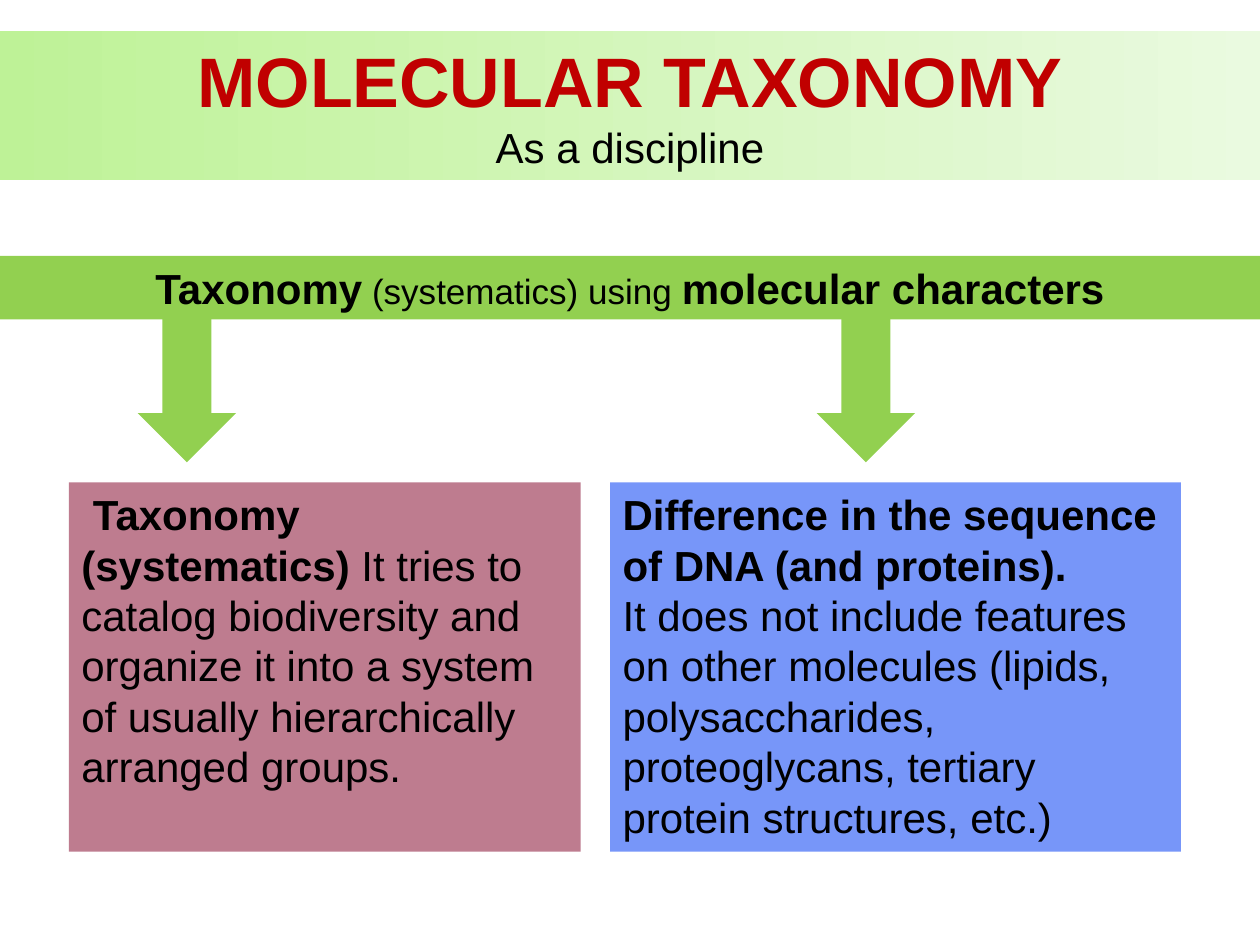
from dataclasses import dataclass

from pptx import Presentation
from pptx.dml.color import RGBColor
from pptx.enum import shapes, text
from pptx.util import Pt


@dataclass(frozen=True)
class Theme:
    font: str = "Arial"
    ink: str = "000000"
    title: str = "C00000"
    fade_start: str = "BEF297"
    fade_end: str = "EAFAE0"
    green: str = "92D050"
    rose: str = "BE7C8F"
    blue: str = "7796F9"
    title_size: int = 40
    body_size: int = 24
    small_size: int = 20


THEME = Theme()
WIDTH, HEIGHT = 720, 540


def add_block(slide, box, fill, kind=shapes.MSO_SHAPE.RECTANGLE):
    """Add a borderless shape; box is left, top, width, height in points."""
    shape = slide.shapes.add_shape(kind, *map(Pt, box))
    shape.shadow.inherit = False
    shape.line.fill.background()
    shape.fill.solid()
    shape.fill.fore_color.rgb = RGBColor.from_string(fill)
    frame = shape.text_frame
    frame.word_wrap = True
    frame.vertical_anchor = text.MSO_ANCHOR.TOP
    return shape


def add_run(paragraph, words, size=THEME.body_size, color=THEME.ink, bold=False):
    run = paragraph.add_run()
    run.text = words
    run.font.name = THEME.font
    run.font.size = Pt(size)
    run.font.bold = bold
    run.font.color.rgb = RGBColor.from_string(color)


def write(shape, paragraphs, align=text.PP_ALIGN.LEFT):
    """Fill a shape with paragraphs, each a list of (words, format) runs."""
    frame = shape.text_frame
    for index, runs in enumerate(paragraphs):
        paragraph = frame.add_paragraph() if index else frame.paragraphs[0]
        paragraph.alignment = align
        for words, style in runs:
            add_run(paragraph, words, **style)


def add_title_band(slide, box):
    band = add_block(slide, box, THEME.fade_start)
    band.fill.gradient()
    band.fill.gradient_angle = 0
    colors = (THEME.fade_start, THEME.fade_end)
    for position, (stop, color) in enumerate(zip(band.fill.gradient_stops, colors)):
        stop.position = position
        stop.color.rgb = RGBColor.from_string(color)
    heading = dict(size=THEME.title_size, color=THEME.title, bold=True)
    write(band, [[("MOLECULAR TAXONOMY", heading)], [("As a discipline", {})]],
          align=text.PP_ALIGN.CENTER)


def add_definition_band(slide, box):
    write(add_block(slide, box, THEME.green), [[
        ("Taxonomy", dict(bold=True)),
        (" (systematics) using ", dict(size=THEME.small_size)),
        ("molecular characters", dict(bold=True)),
    ]], align=text.PP_ALIGN.CENTER)


def add_taxonomy_panel(slide, box):
    write(add_block(slide, box, THEME.rose), [[
        (" Taxonomy (systematics) ", dict(bold=True)),
        ("It tries to catalog biodiversity and organize it into a system "
         "of usually hierarchically arranged groups.", {}),
    ]])


def add_sequence_panel(slide, box):
    write(add_block(slide, box, THEME.blue), [
        [("Difference in the sequence of DNA (and proteins).", dict(bold=True))],
        [("It does not include features on other molecules (lipids, "
          "polysaccharides, proteoglycans, tertiary protein structures, etc.)", {})],
    ])


def add_arrows(slide, lefts, top, width, height):
    for left in lefts:
        add_block(slide, (left, top, width, height), THEME.green,
                  shapes.MSO_SHAPE.DOWN_ARROW)


def main():
    presentation = Presentation()
    presentation.slide_width, presentation.slide_height = Pt(WIDTH), Pt(HEIGHT)
    slide = presentation.slides.add_slide(presentation.slide_layouts[6])
    panel_top, panel_height = 275.7, 211

    add_title_band(slide, (0, 17.8, WIDTH, 85))
    add_definition_band(slide, (0, 146.2, WIDTH, 36.4))
    add_taxonomy_panel(slide, (39.4, panel_top, 292.4, panel_height))
    add_sequence_panel(slide, (348.7, panel_top, 326.2, panel_height))
    add_arrows(slide, lefts=(78.7, 466.7), top=180, width=56.2, height=84.2)

    presentation.save("out.pptx")


if __name__ == "__main__":
    main()
